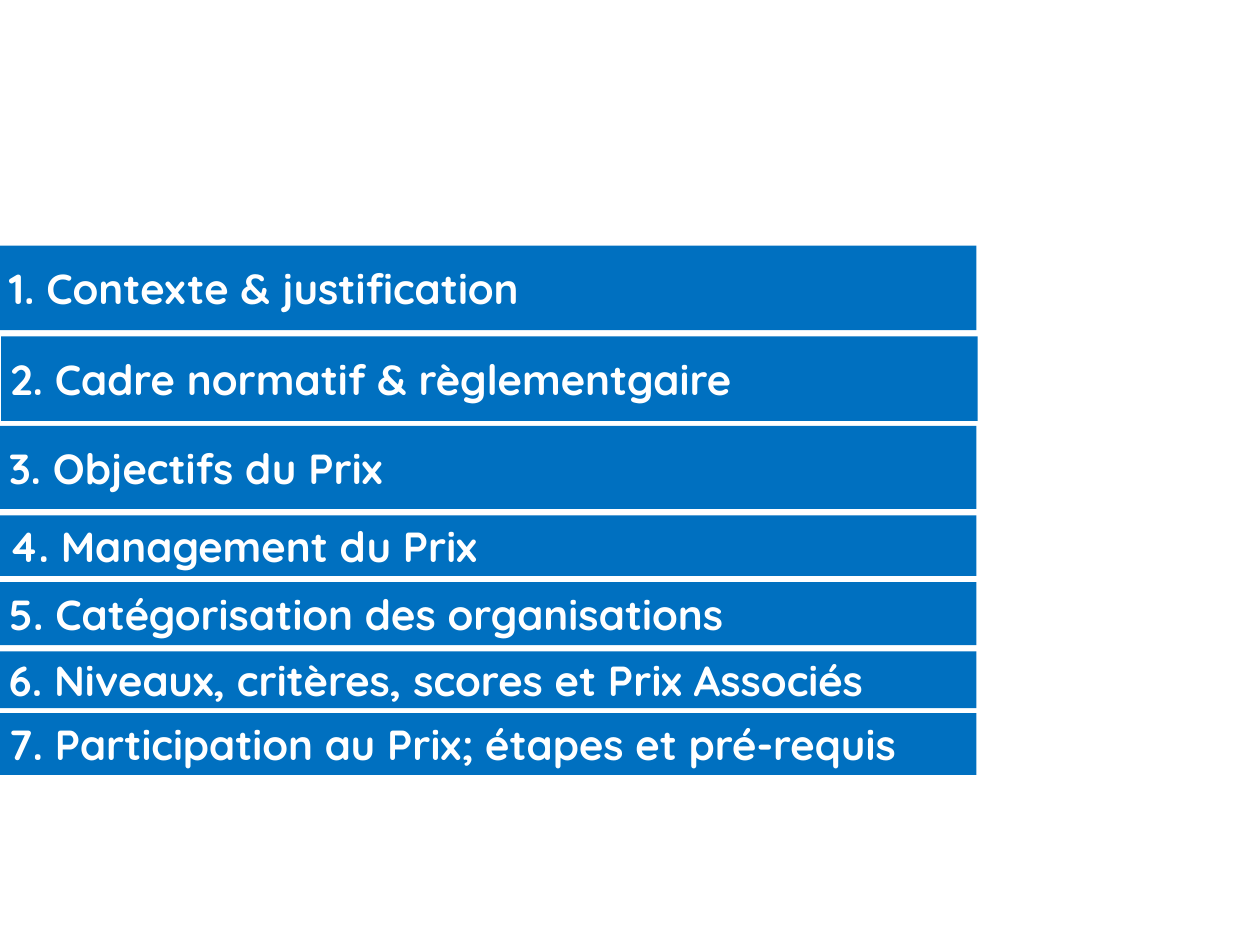
from dataclasses import dataclass

from pptx import Presentation
from pptx.dml.color import RGBColor
from pptx.enum.shapes import MSO_SHAPE
from pptx.enum.text import MSO_ANCHOR, PP_ALIGN
from pptx.util import Inches, Pt


@dataclass(frozen=True)
class Theme:
    bar: RGBColor = RGBColor(0x00, 0x70, 0xC0)
    text: RGBColor = RGBColor(0xFF, 0xFF, 0xFF)
    font: str = "Quicksand"
    size: int = 24


THEME = Theme()
SLIDE_WIDTH, SLIDE_HEIGHT = 10, 7.5
BAR_WIDTH = 0.775 * SLIDE_WIDTH

# Left, top and height in inches, then the wording of each agenda entry.
AGENDA = [
    (0, 1.95, 0.67, "Contexte & justification"),
    (0.01, 2.67, 0.67, "Cadre normatif & règlementgaire"),
    (0, 3.38, 0.66, "Objectifs du Prix"),
    (0, 4.09, 0.48, "Management du Prix"),
    (0, 4.62, 0.5, "Catégorisation des organisations"),
    (0, 5.17, 0.45, "Niveaux, critères, scores et Prix Associés"),
    (0, 5.66, 0.49, "Participation au Prix; étapes et pré-requis"),
]


def apply_format(target, values):
    for name, value in values.items():
        setattr(target, name, value)


def write_label(frame, text):
    apply_format(frame, {
        "word_wrap": True,
        "vertical_anchor": MSO_ANCHOR.MIDDLE,
        "margin_left": Inches(0.07),
        "margin_top": Inches(0.04),
        "margin_right": Inches(0.38),
        "margin_bottom": Inches(0.04),
    })
    para = frame.paragraphs[0]
    para.alignment = PP_ALIGN.LEFT
    span = para.add_run()
    span.text = text
    apply_format(span.font, {"name": THEME.font, "size": Pt(THEME.size), "bold": True})
    span.font.color.rgb = THEME.text


def add_bar(page, left, top, height, text):
    bar = page.shapes.add_shape(
        MSO_SHAPE.RECTANGLE,
        Inches(left), Inches(top), Inches(BAR_WIDTH), Inches(height),
    )
    bar.shadow.inherit = False
    bar.fill.solid()
    bar.fill.fore_color.rgb = THEME.bar
    bar.line.fill.background()
    write_label(bar.text_frame, text)


def main():
    deck = Presentation()
    deck.slide_width, deck.slide_height = Inches(SLIDE_WIDTH), Inches(SLIDE_HEIGHT)
    blank_layout = deck.slide_layouts[6]
    page = deck.slides.add_slide(blank_layout)
    for number, (left, top, height, text) in enumerate(AGENDA, start=1):
        add_bar(page, left, top, height, f"{number}. {text}")
    deck.save("out.pptx")


if __name__ == "__main__":
    main()
